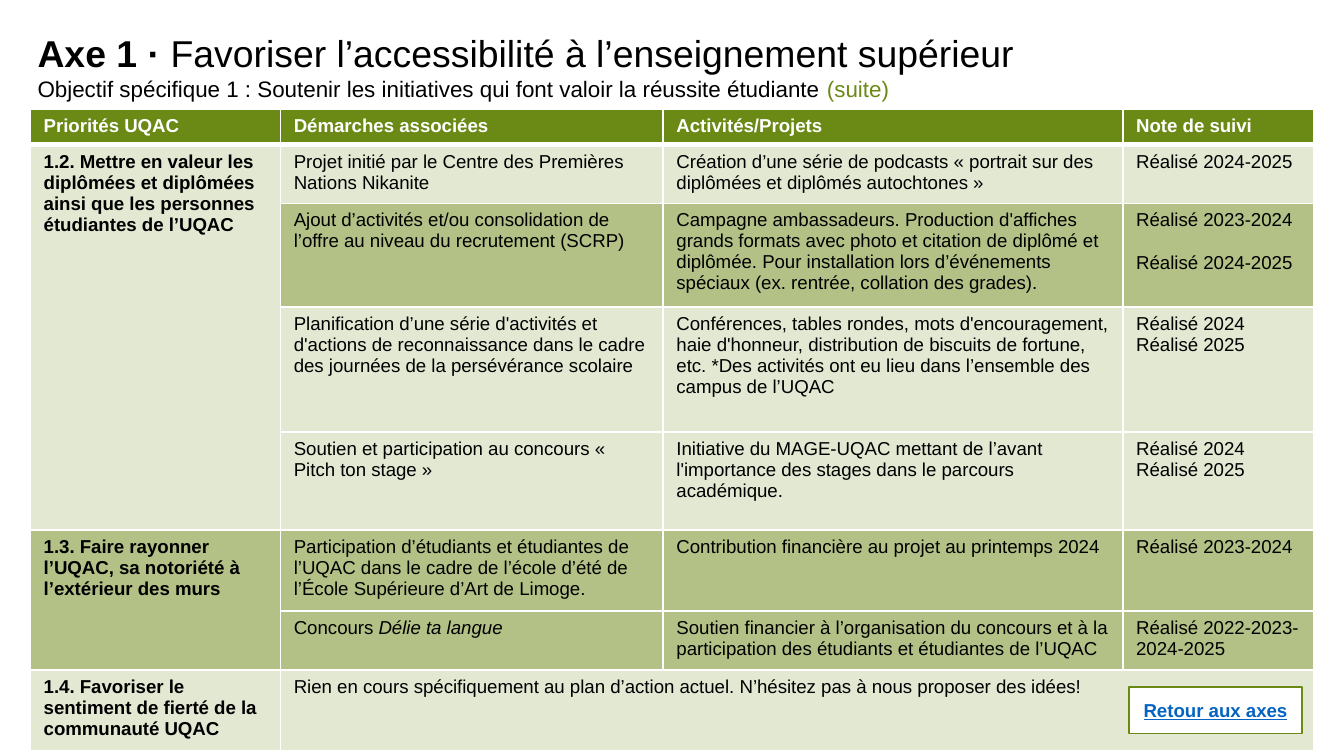
import pptx
import pptx.util
import pptx.dml.color
import pptx.enum.shapes
import pptx.enum.text
import pptx.oxml
import pptx.oxml.ns

Pt = pptx.util.Pt
C = {"green": "6B8A15", "mid": "B3C186", "pale": "E3E8D3",
     "white": "FFFFFF", "black": "000000", "link": "0563C1"}


def style(r, size, color, bold=False):
    r.font.name = "Arial"
    r.font.size = Pt(size)
    r.font.bold = bold
    r.font.color.rgb = pptx.dml.color.RGBColor.from_string(C[color])


def border(cell, side, width):
    tcPr = cell._tc.get_or_add_tcPr()
    tcPr.append(pptx.oxml.parse_xml(
        f'<a:{side} {pptx.oxml.ns.nsdecls("a")} w="{Pt(width)}"><a:solidFill>'
        f'<a:srgbClr val="{C["white"]}"/></a:solidFill></a:{side}>'))


prs = pptx.Presentation()
prs.slide_width = Pt(720)
prs.slide_height = Pt(405)
s = prs.slides.add_slide(prs.slide_layouts[6])

sp = s.shapes.add_textbox(Pt(13), Pt(12.2), Pt(691), Pt(46))
tf = sp.text_frame
tf.word_wrap = True
tf.vertical_anchor = pptx.enum.text.MSO_ANCHOR.MIDDLE
title = [
    [("Axe 1 · ", 20, "black", True),
     ("Favoriser l’accessibilité à l’enseignement supérieur", 20, "black", False)],
    [("Objectif spécifique 1 : Soutenir les initiatives qui font valoir la réussite étudiante ", 12, "black", False),
     ("(suite)", 12, "green", False)],
]
for i, runs in enumerate(title):
    p = tf.paragraphs[0] if i == 0 else tf.add_paragraph()
    for text, size, color, bold in runs:
        r = p.add_run()
        r.text = text
        style(r, size, color, bold)

rows = [
    (18.7, "green", ["Priorités UQAC", "Démarches associées", "Activités/Projets", "Note de suivi"]),
    (31.3, "pale", [
        "1.2. Mettre en valeur les diplômées et diplômées ainsi que les personnes étudiantes de l’UQAC",
        "Projet initié par le Centre des Premières Nations Nikanite",
        "Création d’une série de podcasts « portrait sur des diplômées et diplômés autochtones »",
        "Réalisé 2024-2025"]),
    (55.6, "mid", [
        "",
        "Ajout d’activités et/ou consolidation de l’offre au niveau du recrutement (SCRP)",
        "Campagne ambassadeurs. Production d'affiches grands formats avec photo et citation de diplômé et "
        "diplômée. Pour installation lors d’événements spéciaux (ex. rentrée, collation des grades).",
        "Réalisé 2023-2024\nRéalisé 2024-2025"]),
    (67, "pale", [
        "",
        "Planification d’une série d'activités et d'actions de reconnaissance dans le cadre des journées "
        "de la persévérance scolaire",
        "Conférences, tables rondes, mots d'encouragement, haie d'honneur, distribution de biscuits de fortune, "
        "etc. *Des activités ont eu lieu dans l’ensemble des campus de l’UQAC",
        "Réalisé 2024\nRéalisé 2025"]),
    (52.5, "pale", [
        "",
        "Soutien et participation au concours « Pitch ton stage »",
        "Initiative du MAGE-UQAC mettant de l’avant l'importance des stages dans le parcours académique.",
        "Réalisé 2024\nRéalisé 2025"]),
    (43.4, "mid", [
        "1.3. Faire rayonner l’UQAC, sa notoriété à l’extérieur des murs",
        "Participation d’étudiants et étudiantes de l’UQAC dans le cadre de l’école d’été de "
        "l’École Supérieure d’Art de Limoge.",
        "Contribution financière au projet au printemps 2024",
        "Réalisé 2023-2024"]),
    (31.5, "mid", [
        "",
        "Concours ",
        "Soutien financier à l’organisation du concours et à la participation des étudiants et étudiantes de l’UQAC",
        "Réalisé 2022-2023-2024-2025"]),
    (43.2, "pale", [
        "1.4. Favoriser le sentiment de fierté de la communauté UQAC",
        "Rien en cours spécifiquement au plan d’action actuel. N’hésitez pas à nous proposer des idées!",
        "", ""]),
]
widths = [134, 205, 246.3, 102.3]
height = sum(row[0] for row in rows)
tbl = s.shapes.add_table(len(rows), len(widths), Pt(16.2), Pt(58.4), Pt(sum(widths)), Pt(height)).table
for col, width in zip(tbl.columns, widths):
    col.width = Pt(width)
for i, (height, fill, texts) in enumerate(rows):
    tbl.rows[i].height = Pt(height)
    for j, text in enumerate(texts):
        cell = tbl.cell(i, j)
        for side in ("lnL", "lnR", "lnT", "lnB"):
            thick = (i == 0 and side == "lnB") or (i == 1 and side == "lnT")
            border(cell, side, 3 if thick else 1)
        cell.fill.solid()
        cell.fill.fore_color.rgb = pptx.dml.color.RGBColor.from_string(C[fill])
        cell.text_frame.text = text
        for p in cell.text_frame.paragraphs:
            for r in p.runs:
                style(r, 10, "white" if i == 0 else "black", i == 0 or j == 0)

tbl.cell(2, 3).text_frame.paragraphs[1].space_before = Pt(11.5)
r = tbl.cell(6, 1).text_frame.paragraphs[0].add_run()
r.text = "Délie ta langue"
style(r, 10, "black")
r.font.italic = True
tbl.cell(1, 0).merge(tbl.cell(4, 0))
tbl.cell(5, 0).merge(tbl.cell(6, 0))
tbl.cell(7, 1).merge(tbl.cell(7, 3))

sp = s.shapes.add_shape(pptx.enum.shapes.MSO_SHAPE.RECTANGLE, Pt(604.6), Pt(368), Pt(93), Pt(25))
sp.shadow.inherit = False
sp.fill.solid()
sp.fill.fore_color.rgb = pptx.dml.color.RGBColor.from_string(C["white"])
sp.line.color.rgb = pptx.dml.color.RGBColor.from_string(C["green"])
sp.line.width = Pt(1)
tf = sp.text_frame
tf.text = "Retour aux axes"
tf.vertical_anchor = pptx.enum.text.MSO_ANCHOR.MIDDLE
p = tf.paragraphs[0]
p.alignment = pptx.enum.text.PP_ALIGN.CENTER
r = p.runs[0]
style(r, 10, "link", True)
r.font.underline = True

prs.save("out.pptx")
